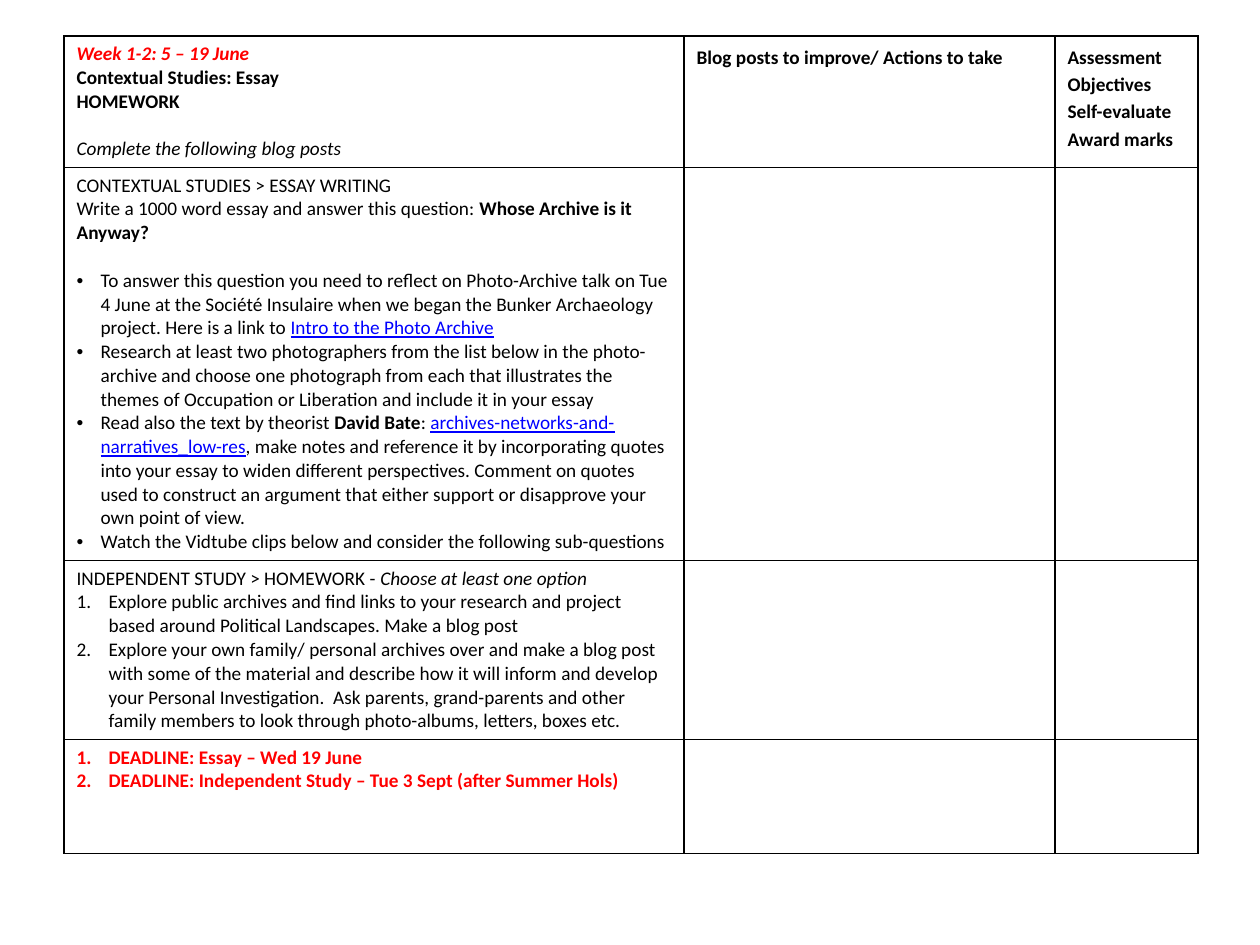
"""Build a homework planner slide with one table of tasks, actions and marks."""
from copy import deepcopy

from pptx import Presentation
from pptx import util as u
from pptx.dml.color import RGBColor
from pptx.oxml import xmlchemy

COLORS = {"text": "000000", "alert": "FF0000", "link": "0000FF", "cell": "FFFFFF", "border": "000000"}
SCALE = 914400 / 126
SLIDE = (1260, 945)
TABLE_ORIGIN = (64, 36)
COLUMNS = [620, 371, 143]
ROWS = [130, 393, 179, 114]
FONT, SIZE = "Calibri", 11

BOLD, ITALIC = {"bold": True}, {"italic": True}
LINK = {"color": "link", "underline": True}
ALERT = {"color": "alert", "bold": True}
PLAIN = {"list_type": None}
BULLET = {"list_type": "bullet", "indent": 24}
NUMBER = {"list_type": "number", "indent": 32}
HEADER = {"line_spacing": 1.15, "space_after": 10}

CELLS = {
    (0, 0): [
        (PLAIN, [
            ("Week 1-2: 5 – 19 June\u00a0\n", {**ALERT, **ITALIC}),
            ("Contextual Studies: Essay\nHOMEWORK\n\n", BOLD),
            ("Complete the following blog posts", ITALIC),
        ]),
    ],
    (0, 1): [(HEADER, [("Blog posts to improve/ Actions to take\n", BOLD)])],
    (0, 2): [(HEADER, [("Assessment Objectives\nSelf-evaluate\nAward marks", BOLD)])],
    (1, 0): [
        (PLAIN, [("CONTEXTUAL STUDIES > ESSAY WRITING", {})]),
        (PLAIN, [
            ("Write a 1000 word essay and answer this question:\u00a0", {}),
            ("Whose Archive is it Anyway?\n", BOLD),
        ]),
        (BULLET, [
            ("To answer this question you need to reflect on Photo-Archive talk on Tue 4 June at "
             "the\u00a0Société Insulaire when we began the Bunker Archaeology project. "
             "Here is a link to\u00a0", {}),
            ("Intro to the Photo Archive", LINK),
        ]),
        (BULLET, [
            ("Research at least two photographers from the list below in the photo-archive and choose "
             "one photograph from each that illustrates the themes of Occupation or Liberation and "
             "include it in your essay", {}),
        ]),
        (BULLET, [
            ("Read also the text by theorist\u00a0", {}),
            ("David Bate", BOLD),
            (":\u00a0", {}),
            ("archives-networks-and-narratives_low-res", LINK),
            (", make notes and reference it by incorporating quotes into your essay to widen different "
             "perspectives. Comment on quotes used to construct an argument that either support or "
             "disapprove your own point of view.", {}),
        ]),
        (BULLET, [("Watch the Vidtube clips below and consider the following sub-questions", {})]),
    ],
    (2, 0): [
        (PLAIN, [
            ("INDEPENDENT STUDY > HOMEWORK - ", {}),
            ("Choose at\u00a0least one option", ITALIC),
        ]),
        (NUMBER, [
            ("Explore public archives and find links to your research and project based around "
             "Political Landscapes. Make a blog post", {}),
        ]),
        (NUMBER, [
            ("Explore your own family/ personal archives over and make a blog post with some of the "
             "material and describe how it will inform and develop your Personal Investigation. \u00a0"
             "Ask parents, grand-parents and other family members to look through photo-albums, "
             "letters, boxes etc.", {}),
        ]),
    ],
    (3, 0): [
        (NUMBER, [("DEADLINE: Essay – Wed 19 June", ALERT)]),
        (NUMBER, [("DEADLINE: Independent Study – Tue 3 Sept (after Summer Hols)", ALERT)]),
    ],
}


def px(length):
    return u.Emu(round(length * SCALE))


def add_child(parent, tag, **attributes):
    child = xmlchemy.OxmlElement(tag)
    for name, value in attributes.items():
        child.set(name, str(value))
    parent.append(child)
    return child


def add_text(paragraph, content, color="text", bold=False, italic=False, underline=False):
    for index, line in enumerate(content.split("\n")):
        if index:
            line_break = add_child(paragraph._p, "a:br")
            line_break.append(deepcopy(run._r.rPr))
            if not line:
                continue
        run = paragraph.add_run()
        run.text = line
        font = run.font
        font.name, font.size = FONT, u.Pt(SIZE)
        font.bold, font.italic, font.underline = bold, italic, underline
        font.color.rgb = RGBColor.from_string(COLORS[color])


def format_paragraph(paragraph, list_type=None, indent=0, line_spacing=None, space_after=0):
    paragraph.line_spacing = line_spacing
    paragraph.space_after = u.Pt(space_after)
    properties = paragraph._p.get_or_add_pPr()
    if list_type:
        properties.set("marL", str(px(indent)))
        properties.set("indent", str(-px(indent)))
    if list_type == "bullet":
        add_child(properties, "a:buFont", typeface="Arial")
        add_child(properties, "a:buChar", char="•")
    elif list_type == "number":
        add_child(properties, "a:buFont", typeface="+mj-lt")
        add_child(properties, "a:buAutoNum", type="arabicPeriod")


def fill_cell(cell, paragraphs):
    for index, (layout, runs) in enumerate(paragraphs):
        frame = cell.text_frame
        paragraph = frame.add_paragraph() if index else frame.paragraphs[0]
        format_paragraph(paragraph, **layout)
        for content, style in runs:
            add_text(paragraph, content, **style)
        add_child(paragraph._p, "a:endParaRPr", sz=SIZE * 100)


def style_cell(cell):
    properties = cell._tc.get_or_add_tcPr()
    for side in ("a:lnL", "a:lnR", "a:lnT", "a:lnB"):
        line = add_child(properties, side, w=u.Pt(1))
        add_child(add_child(line, "a:solidFill"), "a:srgbClr", val=COLORS["border"])
    cell.fill.solid()
    cell.fill.fore_color.rgb = RGBColor.from_string(COLORS["cell"])


def main():
    presentation = Presentation()
    presentation.slide_width, presentation.slide_height = map(px, SLIDE)
    slide = presentation.slides.add_slide(presentation.slide_layouts[6])
    left, top = TABLE_ORIGIN
    table = slide.shapes.add_table(
        len(ROWS), len(COLUMNS), px(left), px(top), px(sum(COLUMNS)), px(sum(ROWS))
    ).table
    table.first_row = table.horz_banding = False
    for column, width in zip(table.columns, COLUMNS):
        column.width = px(width)
    for row, height in zip(table.rows, ROWS):
        row.height = px(height)
    for cell in table.iter_cells():
        style_cell(cell)
    for position, paragraphs in CELLS.items():
        fill_cell(table.cell(*position), paragraphs)
    presentation.save("out.pptx")


if __name__ == "__main__":
    main()
